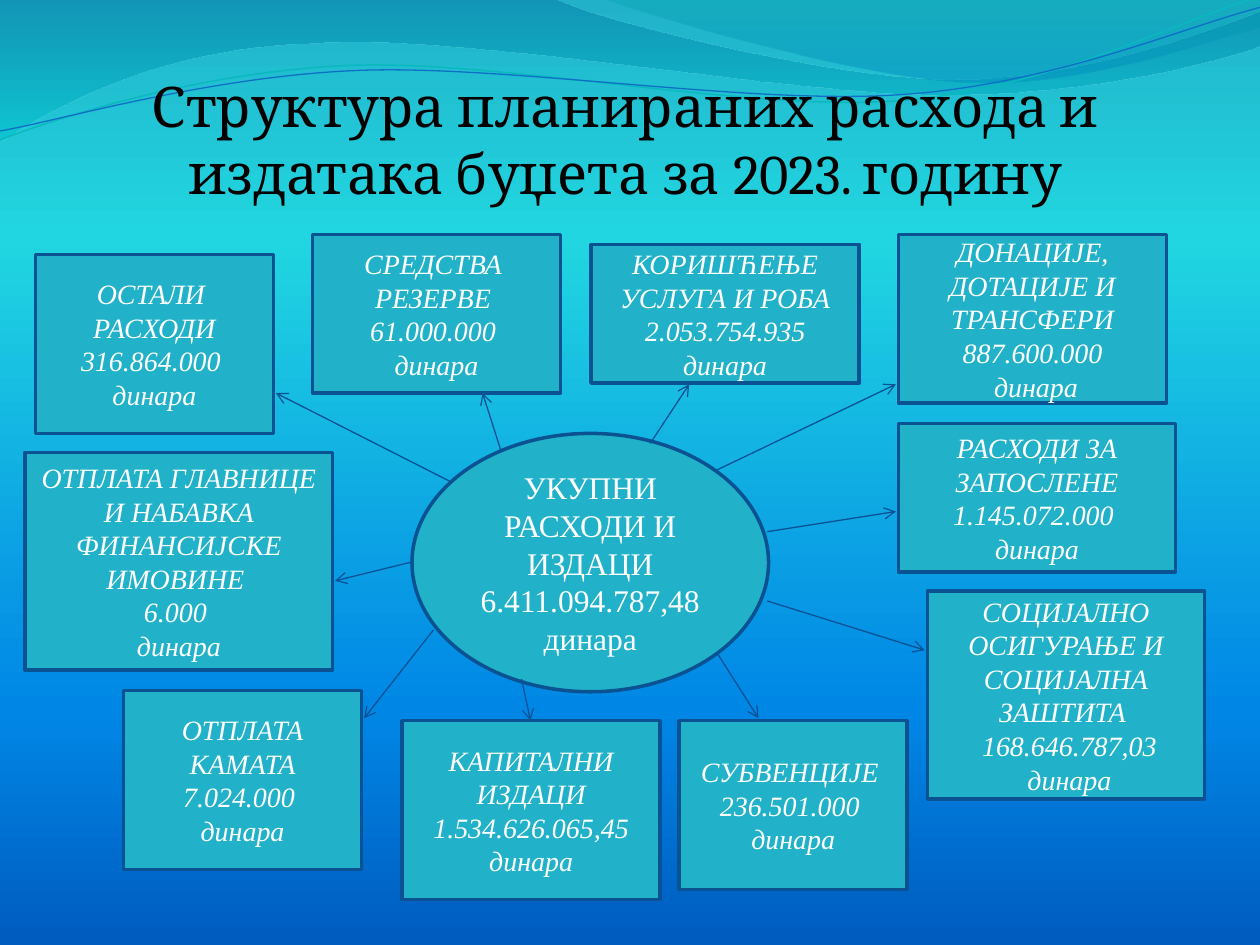
import math

import pptx
import pptx.dml.color
import pptx.enum.shapes
import pptx.enum.text
import pptx.oxml
import pptx.oxml.ns
import pptx.util
from pptx.util import Inches

SHAPES = pptx.enum.shapes.MSO_SHAPE
CENTER = pptx.enum.text.PP_ALIGN.CENTER
MIDDLE = pptx.enum.text.MSO_ANCHOR.MIDDLE
TOP = pptx.enum.text.MSO_ANCHOR.TOP
NAMESPACE = pptx.oxml.ns.nsdecls("a")
TEAL, NAVY, ARROW_BLUE = "21B2C9", "0B5292", "095295"

BACKGROUND = [(0, TEAL, 100), (25, "21D6E0", 100), (75, "0087E6", 100), (100, "005CBF", 100)]

# Each wave is a start point, then one point for a straight step or three for a curve.
WIDE_WAVE = [(0, 0), [(4.4, -0.01)],
             [(4.76, 0.17), (6.64, 0.63), (7.58, 0.63)],
             [(8.53, 0.63), (9.58, 0.26), (10, 0.09)], [(10.01, 0.36)],
             [(9.83, 0.44), (8.7, 0.76), (7.46, 0.75)],
             [(6.22, 0.75), (3.82, 0.28), (2.57, 0.34)],
             [(1.29, 0.36), (0.46, 0.83), (-0.01, 1.13)], [(0, 0)]]
RIGHT_WAVE = [(4.79, -0.01), [(5.09, 0.11), (6.82, 0.62), (7.69, 0.65)],
              [(8.56, 0.69), (9.61, 0.32), (10, 0.21)], [(10, 0)], [(4.79, -0.01)]]
GREEN_LINE = [(0, 1.11), [(0.48, 0.93), (1.58, 0.57), (2.77, 0.52)],
              [(3.95, 0.47), (5.93, 0.89), (7.13, 0.8)],
              [(8.33, 0.71), (9.38, 0.15), (9.98, -0.02)]]
BLUE_LINE = [(0, 1.04), [(0.47, 0.96), (1.64, 0.61), (2.83, 0.56)],
             [(4.03, 0.51), (5.97, 0.84), (7.17, 0.75)],
             [(8.36, 0.67), (9.41, 0.21), (10, 0.06)]]
LINE_TILT = -2.7

TOTAL = (3.27, 3.44, 2.83, 2.05)
# Box, paragraphs, then the arrow that runs from the total to the box.
EXPENSES = [
    ((7.13, 1.86, 2.13, 1.34), ["ДОНАЦИЈЕ, ДОТАЦИЈЕ И ТРАНСФЕРИ", "887.600.000", " динара"],
     (5.69, 3.73), (7.11, 3.05)),
    ((7.13, 3.36, 2.2, 1.18), ["РАСХОДИ ЗА ЗАПОСЛЕНЕ", "1.145.072.000 ", "динара"],
     (6.09, 4.22), (7.11, 4.06)),
    ((7.36, 4.69, 2.2, 1.65),
     ["СОЦИЈАЛНО ОСИГУРАЊЕ И СОЦИЈАЛНА ЗАШТИТА ", " 168.646.787,03", " динара"],
     (6.09, 4.77), (7.34, 5.16)),
    ((4.69, 1.94, 2.13, 1.1), ["КОРИШЋЕЊЕ УСЛУГА И РОБА", "2.053.754.935 динара"],
     (5.16, 3.52), (5.47, 3.05)),
    ((2.48, 1.86, 1.97, 1.26), ["СРЕДСТВА ", "РЕЗЕРВЕ ", "61.000.000 ", "динара"],
     (3.98, 3.59), (3.83, 3.12)),
    ((0.2, 3.59, 2.44, 1.73),
     ["ОТПЛАТА ГЛАВНИЦЕ И НАБАВКА ФИНАНСИЈСКЕ ИМОВИНЕ ", "6.000 ", "динара"],
     (3.27, 4.46), (2.66, 4.61)),
    ((5.39, 5.72, 1.81, 1.34), ["СУБВЕНЦИЈЕ ", "236.501.000 ", "динара"],
     (5.69, 5.18), (6.02, 5.7)),
    ((3.19, 5.72, 2.05, 1.42), ["КАПИТАЛНИ ИЗДАЦИ", " 1.534.626.065,45 ", "динара"],
     (4.14, 5.39), (4.21, 5.72)),
    ((0.98, 5.48, 1.89, 1.42), ["ОТПЛАТА КАМАТА 7.024.000 ", "динара"],
     (3.44, 5), (2.89, 5.7)),
    ((0.28, 2.02, 1.89, 1.42), ["ОСТАЛИ ", "РАСХОДИ 316.864.000 ", "динара"],
     (3.59, 3.83), (2.19, 3.12)),
]


def rgb(color):
    return pptx.dml.color.RGBColor.from_string(color)


def set_line(line, color, width):
    line.color.rgb = rgb(color)
    line.width = pptx.util.Pt(width)


def paint_gradient(fill, owner, stops):
    """Fill from top to bottom with (percent, colour, opacity) stops."""
    fill.gradient()
    fill.gradient_angle = 270
    stop_list = owner.xpath(".//a:gsLst")[0]
    for old_stop in list(stop_list):
        stop_list.remove(old_stop)
    for percent, color, opacity in stops:
        alpha = f'<a:alpha val="{opacity * 1000}"/>' if opacity < 100 else ""
        stop_list.append(pptx.oxml.parse_xml(
            f'<a:gs {NAMESPACE} pos="{percent * 1000}">'
            f'<a:srgbClr val="{color}">{alpha}</a:srgbClr></a:gs>'))


def turn(point, center, degrees):
    angle = math.radians(degrees)
    dx, dy = point[0] - center[0], point[1] - center[1]
    return (center[0] + dx * math.cos(angle) - dy * math.sin(angle),
            center[1] + dx * math.sin(angle) + dy * math.cos(angle))


def add_wave(slide, wave, closed, tilt=0):
    """Draw the wave in a frame tilted by the given degrees."""
    start, *segments = wave
    points = [start] + [point for segment in segments for point in segment]
    center = [(start[axis] + points[-1][axis]) / 2 for axis in (0, 1)]
    corners = [tuple(map(Inches, turn(point, center, -tilt))) for point in points]
    builder = slide.shapes.build_freeform(*corners[0])
    builder.add_line_segments(corners[1:], close=closed)
    shape = builder.convert_to_shape()
    shape.rotation = tilt
    shape.shadow.inherit = False
    steps = iter(shape._element.xpath(".//a:lnTo"))
    for segment in segments:
        group = [next(steps) for _ in segment]
        if len(group) == 3:
            curve = pptx.oxml.parse_xml(f"<a:cubicBezTo {NAMESPACE}/>")
            group[0].addprevious(curve)
            for step in group:
                curve.append(step[0])
                step.getparent().remove(step)
    return shape


def add_waves(slide):
    for wave, stops in ((WIDE_WAVE, [(0, "0074A1", 45), (100, "00C6CF", 55)]),
                        (RIGHT_WAVE, [(0, "00A1A9", 30), (80, "008BBF", 45)])):
        band = add_wave(slide, wave, True)
        paint_gradient(band.fill, band._element, stops)
        band.line.fill.background()
    for wave, color, width in ((GREEN_LINE, "0AB8BF", 0.85), (BLUE_LINE, "0F6FC6", 0.75)):
        strand = add_wave(slide, wave, False, LINE_TILT)
        strand.fill.background()
        set_line(strand.line, color, width)


def write(frame, paragraphs, color, anchor, **font_format):
    frame.word_wrap = True
    frame.vertical_anchor = anchor
    for index, text in enumerate(paragraphs):
        paragraph = frame.paragraphs[0] if index == 0 else frame.add_paragraph()
        paragraph.alignment = CENTER
        run = paragraph.add_run()
        run.text = text
        run.font.color.rgb = rgb(color)
        for name, value in font_format.items():
            setattr(run.font, name, value)


def add_title(slide, box):
    title = slide.shapes.add_textbox(*map(Inches, box))
    write(title.text_frame, ["Структура планираних расхода и издатака буџета за 2023. годину"],
          "000000", TOP, name="Cambria", size=pptx.util.Pt(32))


def add_amount(slide, kind, box, paragraphs, size, italic):
    shape = slide.shapes.add_shape(kind, *map(Inches, box))
    shape.shadow.inherit = False
    shape.fill.solid()
    shape.fill.fore_color.rgb = rgb(TEAL)
    set_line(shape.line, NAVY, 2)
    write(shape.text_frame, paragraphs, "FFFFFF", MIDDLE,
          name="Times New Roman", size=pptx.util.Pt(size), italic=italic)


def add_arrow(slide, start, end):
    arrow = slide.shapes.add_connector(pptx.enum.shapes.MSO_CONNECTOR.STRAIGHT,
                                       *map(Inches, (*start, *end)))
    set_line(arrow.line, ARROW_BLUE, 0.75)
    arrow.line._get_or_add_ln().append(
        pptx.oxml.parse_xml(f'<a:tailEnd {NAMESPACE} type="arrow"/>'))
    arrow._element.spPr.append(pptx.oxml.parse_xml(f"<a:effectLst {NAMESPACE}/>"))


def add_expense_map(slide):
    add_amount(slide, SHAPES.OVAL, TOTAL,
               ["УКУПНИ РАСХОДИ И ИЗДАЦИ", "6.411.094.787,48 динара"], 18, False)
    for box, paragraphs, _, _ in EXPENSES:
        add_amount(slide, SHAPES.RECTANGLE, box, paragraphs, 16, True)
    for _, _, start, end in EXPENSES:
        add_arrow(slide, start, end)


def main():
    deck = pptx.Presentation()
    deck.slide_width, deck.slide_height = Inches(10), Inches(7.5)
    slide = deck.slides.add_slide(deck.slide_layouts[6])
    paint_gradient(slide.background.fill, slide._element, BACKGROUND)
    add_waves(slide)
    add_title(slide, (0.28, 0.52, 9.37, 1.18))
    add_expense_map(slide)
    deck.save("out.pptx")


if __name__ == "__main__":
    main()
